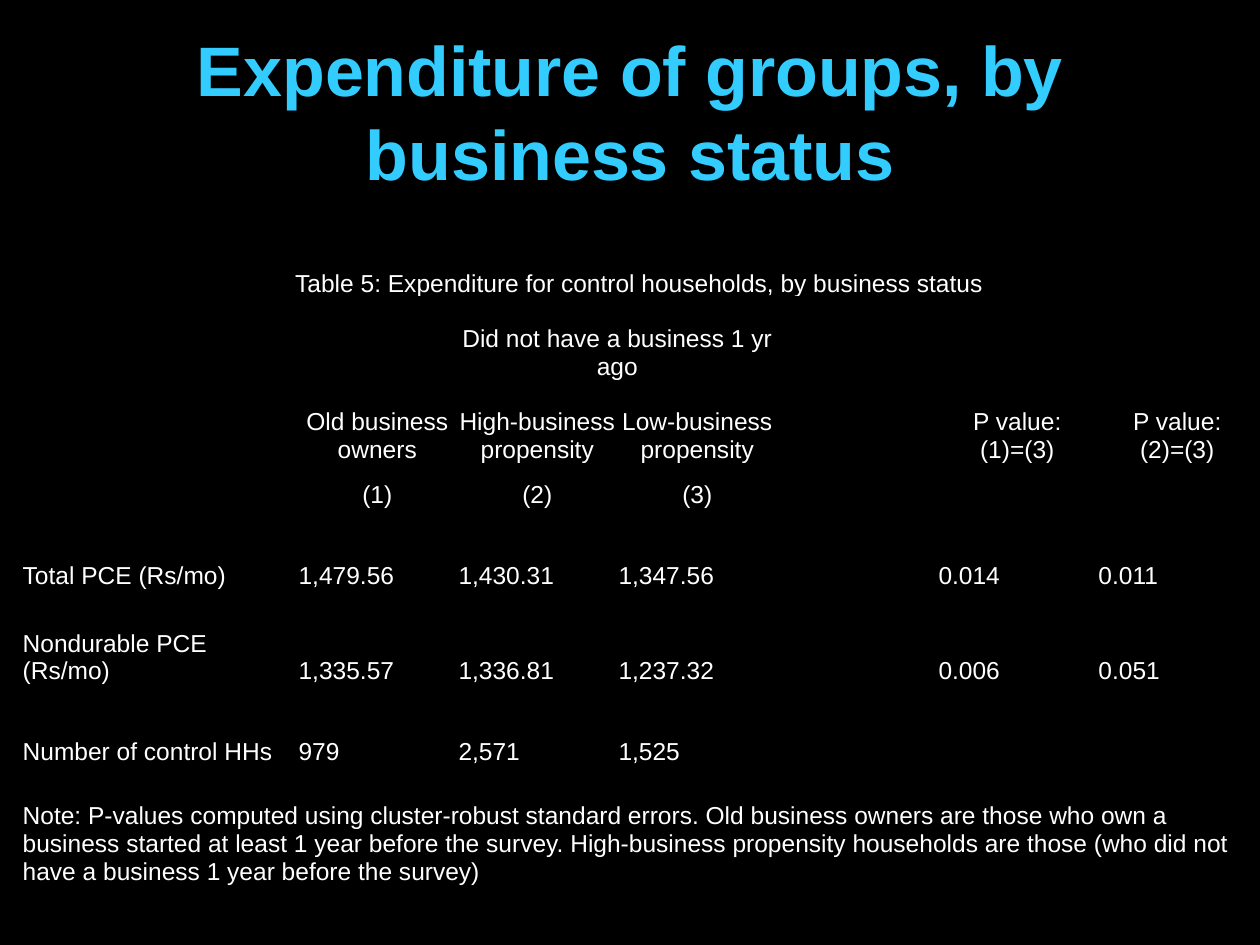
from lxml import etree
from pptx import Presentation, util as u
from pptx.dml.color import RGBColor
from pptx.enum import text
from pptx.oxml import ns

deck = Presentation()
deck.slide_width = u.Inches(10)
deck.slide_height = u.Inches(7.5)
width, height = deck.slide_width, deck.slide_height
page = deck.slides.add_slide(deck.slide_layouts[6])
page.background.fill.solid()
page.background.fill.fore_color.rgb = RGBColor.from_string("000000")


def write(para, words, size, colour, bold=False):
    span = para.add_run()
    span.text = words
    span.font.name = "Arial"
    span.font.size = u.Pt(size)
    span.font.bold = bold
    span.font.color.rgb = RGBColor.from_string(colour)


def rule(cell, side, points, colour):
    line = etree.SubElement(cell._tc.get_or_add_tcPr(), ns.qn("a:" + side), w=str(u.Pt(points)))
    fill = etree.SubElement(line, ns.qn("a:solidFill"))
    etree.SubElement(fill, ns.qn("a:srgbClr"), val=colour)


title = page.shapes.add_textbox(int(width * 0.05), int(height / 30), int(width * 0.9), int(height / 6))
title.text_frame.word_wrap = True
title.text_frame.vertical_anchor = text.MSO_ANCHOR.MIDDLE
title.text_frame.paragraphs[0].alignment = text.PP_ALIGN.CENTER
write(title.text_frame.paragraphs[0], "Expenditure of groups, by business status", 40, "33CCFF", True)

columns = [2.19] + [1.27] * 6
rows = [0.36, 0.66, 0.66, 0.36] + [0.28, 0.36] * 3 + [0.95]
content = [
    ["Table 5: Expenditure for control households, by business status"],
    ["", "", "Did not have a business 1 yr ago"],
    ["", "Old business owners", "High-business propensity", "Low-business propensity", "",
     "P value: (1)=(3)", "P value: (2)=(3)"],
    ["", "(1)", "(2)", "(3)"],
    [],
    ["Total PCE (Rs/mo)", "1,479.56", "1,430.31", "1,347.56", "", "0.014", "0.011"],
    [],
    ["Nondurable PCE (Rs/mo)", "1,335.57", "1,336.81", "1,237.32", "", "0.006", "0.051"],
    [],
    ["Number of control HHs", "979", "2,571", "1,525"],
    ["Note: P-values computed using cluster-robust standard errors. Old business owners are those "
     "who own a business started at least 1 year before the survey. High-business propensity "
     "households are those (who did not have a business 1 year before the survey)"],
]
rules_below = {
    0: (range(7), 2),
    1: ((2, 3), 0.5),
    2: ((1, 2, 3, 5, 6), 0.5),
    9: (range(7), 0.5),
}
no_rule = ((), 0)
header_rows = 4

frame = page.shapes.add_table(len(rows), len(columns), u.Inches(0.17), u.Inches(2),
                              u.Inches(sum(columns)), u.Inches(sum(rows)))
table = frame.table
table.first_row = False
table.horz_banding = False
for style in frame._element.iter(ns.qn("a:tableStyleId")):
    style.text = "{2D5ABB26-0587-4C30-8999-92F81FD0307C}"
for column, share in zip(table.columns, columns):
    column.width = u.Inches(share)
for row, share in zip(table.rows, rows):
    row.height = u.Inches(share)
for row, first, last in [(0, 0, 6), (1, 2, 3), (10, 0, 6)]:
    table.cell(row, first).merge(table.cell(row, last))

for row, entries in enumerate(content):
    for column in range(len(columns)):
        cell = table.cell(row, column)
        for side, owner in [("lnT", row - 1), ("lnB", row)]:
            ruled, points = rules_below.get(owner, no_rule)
            if column in ruled:
                rule(cell, side, points, "000000")
        cell.fill.background()
        cell.margin_left = cell.margin_right = cell.margin_top = u.Inches(0.01)
        cell.margin_bottom = 0
        cell.vertical_anchor = text.MSO_ANCHOR.BOTTOM
        para = cell.text_frame.paragraphs[0]
        if row < header_rows:
            para.alignment = text.PP_ALIGN.CENTER
        if column < len(entries) and entries[column]:
            write(para, entries[column], 14, "FFFFFF")
        else:
            etree.SubElement(para._p, ns.qn("a:endParaRPr"), sz="1400")

deck.save("out.pptx")
